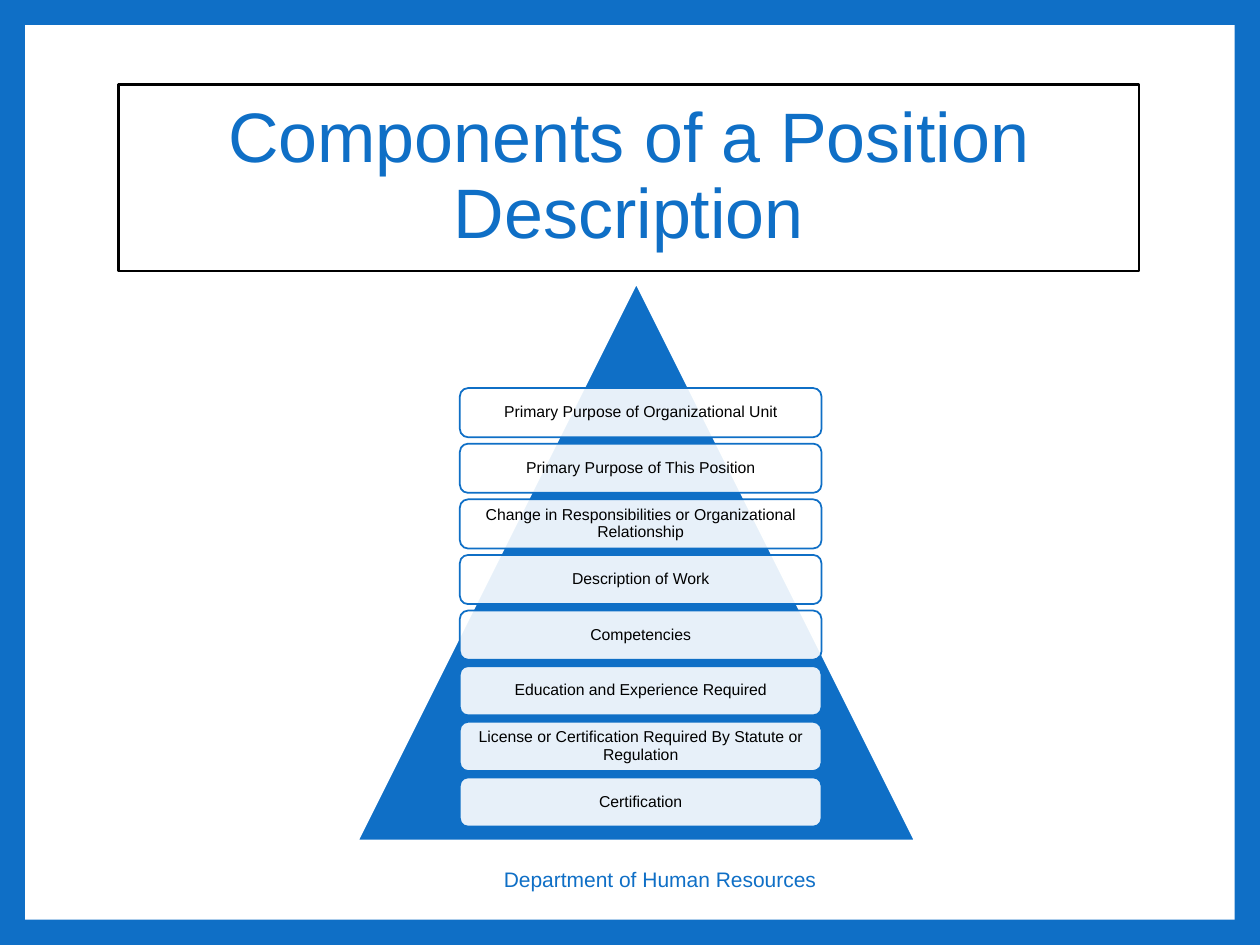
"""Build the slide on the components of a position description."""
from lxml import etree
from pptx import Presentation
from pptx.dml.color import RGBColor
from pptx.enum.shapes import MSO_SHAPE as SHAPE
from pptx.enum.text import MSO_ANCHOR as ANCHOR, PP_ALIGN as ALIGN
from pptx.oxml.ns import qn
from pptx.util import Inches, Pt

COLORS = {"blue": "0F6FC6", "white": "FFFFFF", "black": "000000"}
FONT = "Arial"
COMPONENTS = [
    "Primary Purpose of Organizational Unit",
    "Primary Purpose of This Position",
    "Change in Responsibilities or Organizational Relationship",
    "Description of Work",
    "Competencies",
    "Education and Experience Required",
    "License or Certification Required By Statute or Regulation",
    "Certification",
]
FIRST_TOP, LAST_TOP = 3.08, 6.17


def rgb(name):
    return RGBColor.from_string(COLORS[name])


def add_shape(shapes, kind, box, fill=None, line=None, width=1, alpha=None):
    sp = shapes.add_shape(kind, *map(Inches, box))
    sp.shadow.inherit = False
    if fill:
        sp.fill.solid()
        sp.fill.fore_color.rgb = rgb(fill)
    else:
        sp.fill.background()
    if alpha:
        color = sp.fill._xPr.find(qn("a:solidFill"))[0]
        etree.SubElement(color, qn("a:alpha")).set("val", str(alpha * 1000))
    if line:
        sp.line.color.rgb = rgb(line)
        sp.line.width = Pt(width)
    else:
        sp.line.fill.background()
    return sp


def set_text(sp, text, size, color, spacing=1.0, inset=None):
    tf = sp.text_frame
    tf.word_wrap = True
    tf.vertical_anchor = ANCHOR.MIDDLE
    if inset is not None:
        tf.margin_left = tf.margin_right = Inches(inset)
        tf.margin_top = tf.margin_bottom = Inches(inset)
    tf.text = text
    p = tf.paragraphs[0]
    p.alignment = ALIGN.CENTER
    p.line_spacing = spacing
    font = p.runs[0].font
    font.name, font.size = FONT, Pt(size)
    font.color.rgb = rgb(color)


def add_pyramid(slide):
    shapes = slide.shapes.add_group_shape().shapes
    add_shape(shapes, SHAPE.ISOSCELES_TRIANGLE, (2.84, 2.25, 4.42, 4.42), "blue", "white")
    pitch = (LAST_TOP - FIRST_TOP) / (len(COMPONENTS) - 1)
    for i, label in enumerate(COMPONENTS):
        box = (3.65, FIRST_TOP + i * pitch, 2.87, 0.39)
        sp = add_shape(shapes, SHAPE.ROUNDED_RECTANGLE, box, "white", "blue", alpha=90)
        set_text(sp, label, 9, "black", spacing=0.9, inset=0.06)


def main():
    prs = Presentation()
    prs.slide_width, prs.slide_height = Inches(10), Inches(7.5)
    slide = prs.slides.add_slide(prs.slide_layouts[6])
    slide.background.fill.solid()
    slide.background.fill.fore_color.rgb = rgb("blue")
    add_shape(slide.shapes, SHAPE.RECTANGLE, (0.2, 0.2, 9.6, 7.1), "white")

    title = add_shape(slide.shapes, SHAPE.RECTANGLE, (0.94, 0.67, 8.1, 1.48),
                      line="black", width=1.5)
    set_text(title, "Components of a Position Description", 40, "blue", spacing=0.9)

    footer = slide.shapes.add_textbox(*map(Inches, (3.22, 6.78, 4.04, 0.4)))
    set_text(footer, "Department of Human Resources", 12, "blue")

    add_pyramid(slide)
    prs.save("out.pptx")


if __name__ == "__main__":
    main()
